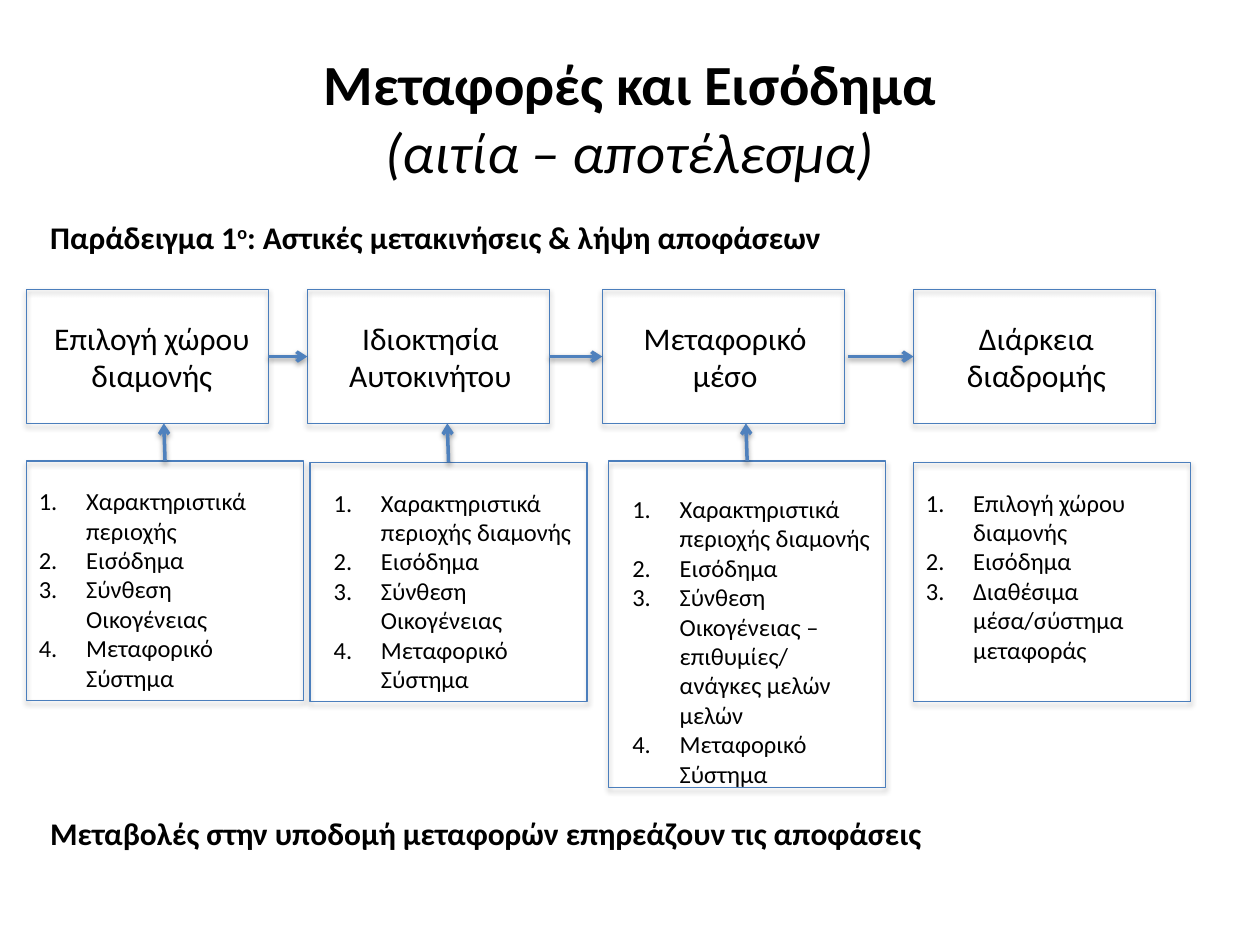
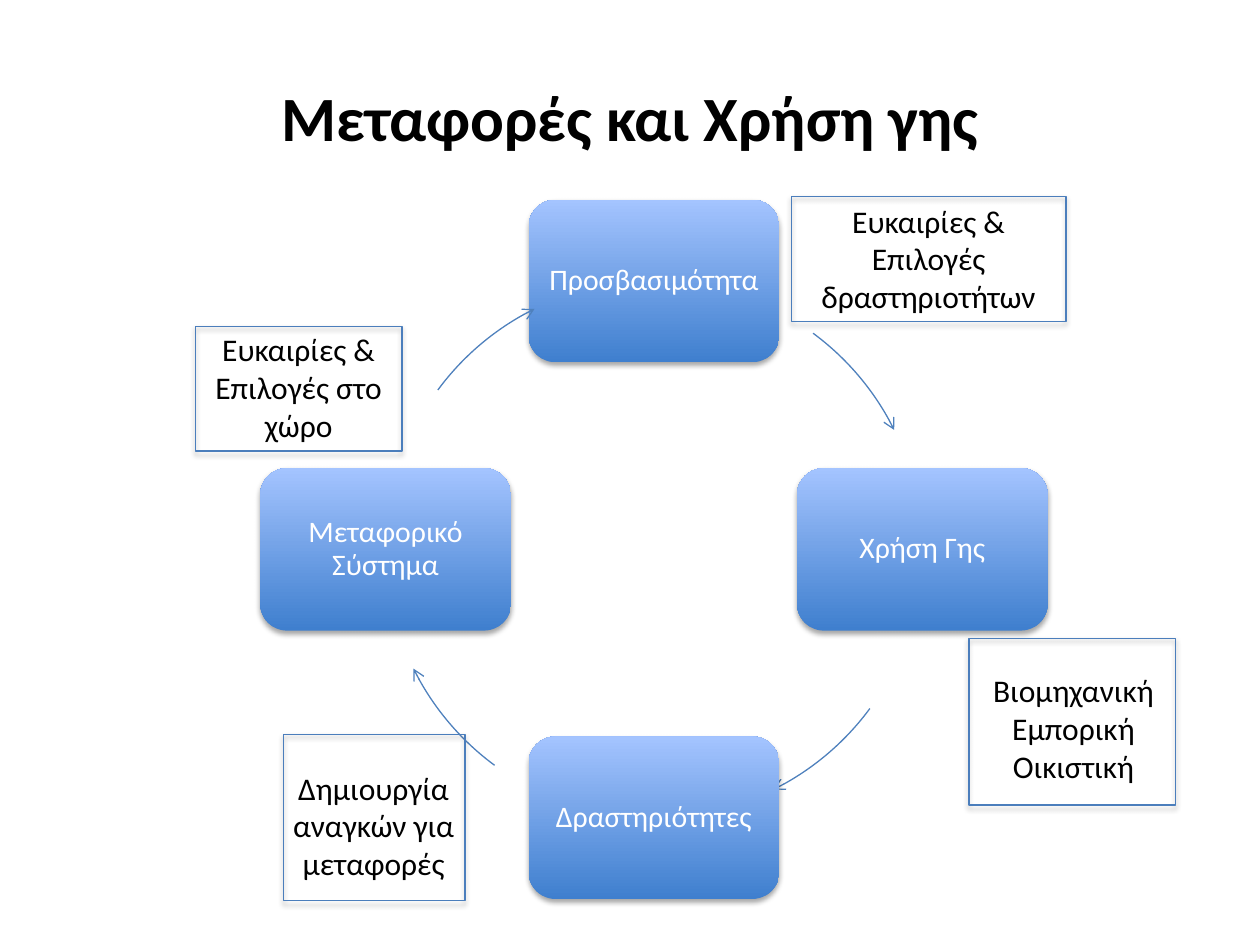
from pptx import Presentation
from pptx.dml.color import RGBColor
from pptx.enum.shapes import MSO_CONNECTOR, MSO_SHAPE
from pptx.enum.text import MSO_ANCHOR, MSO_AUTO_SIZE, PP_ALIGN
from pptx.oxml.ns import qn
from pptx.util import Emu, Inches, Pt
from lxml.etree import SubElement

FONT = "Calibri"
COLORS = {
    "text": "000000", "white": "FFFFFF", "outline": "4B7EBC",
    "arrow": "4F81BD", "node_low": "3F7FCE", "node_high": "A4C4FF",
}

# Slide 1: decision chain; each step has the factors behind it
INCOME_TITLE = ["Μεταφορές και Εισόδημα", "(αιτία – αποτέλεσμα)"]
EXAMPLE = ["Παράδειγμα 1", "ο", ": Αστικές μετακινήσεις & λήψη αποφάσεων"]
CONCLUSION = "Μεταβολές στην υποδομή μεταφορών επηρεάζουν τις αποφάσεις"
STEP_SIZE = (1.92, 1.06)
STEP_TOP = 2.3
STEPS = [  # name, left, text left, text width
    ("Επιλογή χώρου διαμονής", 0.21, 0.27, 1.87),
    ("Ιδιοκτησία Αυτοκινήτου", 2.44, 2.44, 1.95),
    ("Μεταφορικό μέσο", 4.78, 4.78, 1.95),
    ("Διάρκεια διαδρομής", 7.25, 7.25, 1.95),
]
FACTORS = [  # box, text offset, items
    ((0.21, 3.66, 2.2, 1.9), (0, 0.15),
     ["Χαρακτηριστικά περιοχής", "Εισόδημα", "Σύνθεση Οικογένειας",
      "Μεταφορικό Σύστημα"]),
    ((2.46, 3.67, 2.2, 1.9), (0.09, 0.15),
     ["Χαρακτηριστικά περιοχής διαμονής", "Εισόδημα", "Σύνθεση Οικογένειας",
      "Μεταφορικό Σύστημα"]),
    ((4.83, 3.66, 2.2, 2.59), (0.09, 0.21),
     ["Χαρακτηριστικά περιοχής διαμονής", "Εισόδημα",
      "Σύνθεση Οικογένειας – επιθυμίες/ ανάγκες μελών μελών",
      "Μεταφορικό Σύστημα"]),
    ((7.25, 3.67, 2.2, 1.9), (0, 0.15),
     ["Επιλογή χώρου διαμονής", "Εισόδημα",
      "Διαθέσιμα μέσα/σύστημα μεταφοράς"]),
]

# Slide 2: cycle, clockwise from the top, with notes beside it
LAND_TITLE = "Μεταφορές και Χρήση γης"
CENTRE = (5.19, 4.36)
RADIUS = 2.13
NODE_SIZE = (1.99, 1.29)
ARC_SPAN = (306.4, 333.6)
CYCLE = [  # name, direction from the centre
    ("Προσβασιμότητα", (0, -1)),
    ("Χρήση Γης", (1, 0)),
    ("Δραστηριότητες", (0, 1)),
    ("Μεταφορικό Σύστημα", (-1, 0)),
]
NOTES = [  # box, text area, paragraphs, wrap
    ((7.69, 5.07, 1.64, 1.32), (7.77, 5.28, 1.5, 1.01),
     ["Βιομηχανική", "Εμπορική", "Οικιστική"], False),
    ((2.25, 5.83, 1.44, 1.32), (2.01, 6.05, 1.91, 1.01),
     ["Δημιουργία αναγκών για μεταφορές"], True),
    ((1.55, 2.59, 1.64, 0.99), (1.55, 2.57, 1.64, 1.01),
     ["Ευκαιρίες & Επιλογές στο χώρο"], True),
    ((6.28, 1.56, 2.18, 0.99), (6.28, 1.55, 2.18, 1.01),
     ["Ευκαιρίες & Επιλογές δραστηριοτήτων"], True),
]


def rgb(name):
    return RGBColor.from_string(COLORS[name])


def add_run(p, text, size=18, color="text", bold=False, italic=False, raised=False):
    r = p.add_run()
    r.text = text
    f = r.font
    f.name, f.size, f.bold, f.italic = FONT, Pt(size), bold, italic
    f.color.rgb = rgb(color)
    if raised:
        r._r.get_or_add_rPr().set("baseline", "30000")


def number(p):
    pPr = p._p.get_or_add_pPr()
    pPr.set("marL", str(Inches(0.375)))
    pPr.set("indent", str(Inches(-0.375)))
    SubElement(pPr, qn("a:buAutoNum"), type="arabicPeriod")


def add_text(slide, box, paragraphs, align=PP_ALIGN.CENTER, wrap=True,
             numbered=False, **fmt):
    tf = slide.shapes.add_textbox(*map(Inches, box)).text_frame
    tf.word_wrap = wrap
    tf.auto_size = MSO_AUTO_SIZE.SHAPE_TO_FIT_TEXT
    for i, text in enumerate(paragraphs):
        p = tf.add_paragraph() if i else tf.paragraphs[0]
        p.alignment = align
        if numbered:
            number(p)
        add_run(p, text, **fmt)
    return tf


def add_shadow(s, alpha=35, dist=1.8):
    effects = SubElement(s._element.spPr, qn("a:effectLst"))
    outer = SubElement(effects, qn("a:outerShdw"), blurRad=str(Pt(3.1)),
                       dist=str(Pt(dist)), dir="5400000", rotWithShape="0")
    color = SubElement(outer, qn("a:srgbClr"), val=COLORS["text"])
    SubElement(color, qn("a:alpha"), val=str(alpha * 1000))


def style_arrow(s, width):
    s.line.color.rgb = rgb("arrow")
    s.line.width = Pt(width)
    SubElement(s.line._get_or_add_ln(), qn("a:tailEnd"), type="arrow")


def add_frame(slide, box):
    s = slide.shapes.add_shape(MSO_SHAPE.RECTANGLE, *map(Inches, box))
    s.fill.background()
    s.line.color.rgb = rgb("outline")
    s.line.width = Pt(0.75)
    add_shadow(s)
    return s


def add_arrow(slide, start, end, begin=None, finish=None):
    """begin and finish are (shape, side) pairs to join."""
    c = slide.shapes.add_connector(MSO_CONNECTOR.STRAIGHT,
                                   *map(Inches, (*start, *end)))
    if begin:
        c.begin_connect(*begin)
    if finish:
        c.end_connect(*finish)
    style_arrow(c, 2)
    add_shadow(c, alpha=38, dist=1.6)


def new_slide(prs):
    slide = prs.slides.add_slide(prs.slide_layouts[5])
    t = slide.shapes.title
    t.left, t.top, t.width, t.height = map(Inches, (0.5, 0.3, 9, 1.25))
    tf = t.text_frame
    tf.auto_size = MSO_AUTO_SIZE.NONE
    tf.vertical_anchor = MSO_ANCHOR.MIDDLE
    p = tf.paragraphs[0]
    p.alignment = PP_ALIGN.CENTER
    return slide, p


def build_income(prs):
    slide, p = new_slide(prs)
    add_run(p, INCOME_TITLE[0], size=32.4, bold=True)
    p.add_line_break()
    add_run(p, INCOME_TITLE[1], size=32.4, italic=True)

    # Heading and conclusion
    line = dict(align=PP_ALIGN.LEFT, wrap=False, bold=True)
    tf = add_text(slide, (0.3, 1.68, 6.41, 0.4), EXAMPLE[:1], **line)
    add_run(tf.paragraphs[0], EXAMPLE[1], bold=True, raised=True)
    add_run(tf.paragraphs[0], EXAMPLE[2], bold=True)
    add_text(slide, (0.3, 6.41, 7.2, 0.4), [CONCLUSION], **line)

    # Steps
    steps = []
    for name, x, text_x, text_w in STEPS:
        steps.append(add_frame(slide, (x, STEP_TOP, *STEP_SIZE)))
        add_text(slide, (text_x, 2.48, text_w, 0.71), [name])

    # Arrows between steps; the last one starts clear of its box
    mid = STEP_TOP + STEP_SIZE[1] / 2
    for i, (a, b) in enumerate(zip(steps, steps[1:])):
        begin = (a, 3) if i < 2 else None
        add_arrow(slide, (6.73, mid), (7.25, mid), begin, (b, 1))

    # Factors, with an arrow up to each step but the last
    for i, ((x, y, w, h), (dx, dy), items) in enumerate(FACTORS):
        frame = add_frame(slide, (x, y, w, h))
        add_text(slide, (x + dx, y + dy, 2.11, h - dy), items,
                 align=PP_ALIGN.LEFT, numbered=True, size=14)
        if i < 3:
            top = x + w / 2
            add_arrow(slide, (top, y), (top - 0.01, STEP_TOP + STEP_SIZE[1]),
                      (frame, 0))


def add_node(slide, name, direction):
    w, h = NODE_SIZE
    x, y = (c + RADIUS * d for c, d in zip(CENTRE, direction))
    s = slide.shapes.add_shape(MSO_SHAPE.ROUNDED_RECTANGLE, *map(
        Inches, (x - w / 2, y - h / 2, w, h)))
    s.fill.gradient()
    s.fill.gradient_angle = 90
    for stop, color, pos in zip(s.fill.gradient_stops,
                                ("node_low", "node_high"), (0, 1)):
        stop.color.rgb = rgb(color)
        stop.position = pos
    s.line.fill.background()
    add_shadow(s)
    tf = s.text_frame
    tf.word_wrap = True
    tf.vertical_anchor = MSO_ANCHOR.MIDDLE
    tf.margin_left = tf.margin_right = Inches(0.07)
    p = tf.paragraphs[0]
    p.alignment, p.line_spacing = PP_ALIGN.CENTER, 0.9
    add_run(p, name, size=17, color="white")


def add_arc(slide, turn):
    box = [c - RADIUS for c in CENTRE] + [2 * RADIUS] * 2
    s = slide.shapes.add_shape(MSO_SHAPE.ARC, *map(Inches, box))
    for i, angle in enumerate(ARC_SPAN):
        # 60000 units a degree, over the library's scale of 100000
        s.adjustments[i] = (angle + turn) % 360 * 0.6
    s.fill.background()
    style_arrow(s, 0.75)
    s.shadow.inherit = False


def build_land_use(prs):
    slide, p = new_slide(prs)
    add_run(p, LAND_TITLE, size=36, bold=True)
    for i, (name, direction) in enumerate(CYCLE):
        add_node(slide, name, direction)
        add_arc(slide, 90 * i)
    for box, area, paragraphs, wrap in NOTES:
        add_frame(slide, box)
        add_text(slide, area, paragraphs, wrap=wrap)


def main():
    prs = Presentation()
    prs.slide_width, prs.slide_height = Inches(10), Inches(7.5)
    build_income(prs)
    build_land_use(prs)
    prs.save("out.pptx")


if __name__ == "__main__":
    main()
